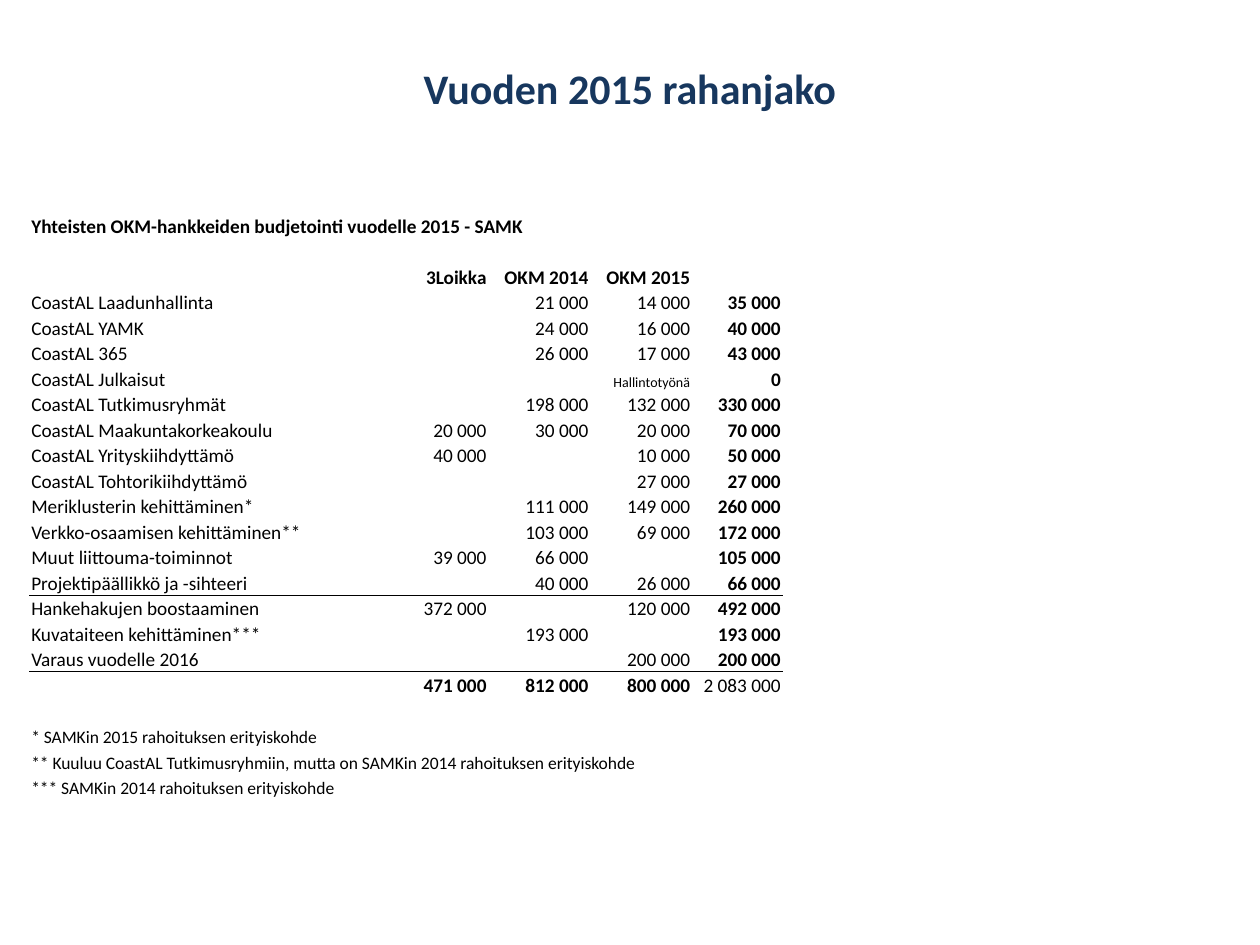
from dataclasses import dataclass

from lxml import etree
from pptx import Presentation
from pptx.dml.color import RGBColor
from pptx.enum.text import MSO_ANCHOR, PP_ALIGN
from pptx.oxml.ns import qn
from pptx.util import Inches, Pt

LEFT, CENTER, RIGHT = PP_ALIGN.LEFT, PP_ALIGN.CENTER, PP_ALIGN.RIGHT
BOTTOM = MSO_ANCHOR.BOTTOM
NBSP = chr(160)


@dataclass(frozen=True)
class Theme:
    font: str = "Calibri"
    title_color: str = "17375E"
    text_color: str = "000000"
    title_size: int = 24
    body_size: int = 11
    note_size: int = 10
    remark_size: int = 8
    rule_width: float = 0.5


@dataclass
class Entry:
    """What one table cell shows."""
    text: str
    align: int = RIGHT
    bold: bool = False
    size: int = Theme.body_size
    span: int = 1


class SlideBuilder:
    def __init__(self, presentation, theme):
        self.theme = theme
        self.width = presentation.slide_width
        self.height = presentation.slide_height
        self.slide = presentation.slides.add_slide(presentation.slide_layouts[6])

    def place(self, left, top, width, height):
        """Turn percentages of the slide into lengths."""
        return (round(left * self.width / 100), round(top * self.height / 100),
                round(width * self.width / 100), round(height * self.height / 100))

    def style(self, paragraph, size, color, bold, align):
        paragraph.alignment = align
        font = paragraph.font
        font.name, font.size, font.bold = self.theme.font, Pt(size), bold
        font.color.rgb = RGBColor.from_string(color)

    def title(self, text, *area):
        frame = self.slide.shapes.add_textbox(*self.place(*area)).text_frame
        frame.word_wrap = True
        paragraph = frame.paragraphs[0]
        paragraph.text = text
        self.style(paragraph, self.theme.title_size, self.theme.title_color, True, CENTER)

    def table(self, rows, column_shares, ruled_rows, *area):
        left, top, width, height = self.place(*area)
        shape = self.slide.shapes.add_table(
            len(rows), len(column_shares), left, top, width, height)
        table = shape.table
        table.first_row = table.horz_banding = False
        for column, share in zip(table.columns, column_shares):
            column.width = round(width * share / sum(column_shares))
        for row_index, entries in enumerate(rows):
            table.rows[row_index].height = height // len(rows)
            for column_index in range(len(column_shares)):
                cell = table.cell(row_index, column_index)
                self.fill_cell(cell, entries.get(column_index, Entry("")))
                if row_index in ruled_rows:
                    self.rule(cell, "a:lnB")
                if row_index - 1 in ruled_rows:
                    self.rule(cell, "a:lnT")
            for column_index, entry in entries.items():
                if entry.span > 1:
                    last = table.cell(row_index, column_index + entry.span - 1)
                    table.cell(row_index, column_index).merge(last)

    def fill_cell(self, cell, entry):
        cell.fill.background()
        cell.vertical_anchor = BOTTOM
        cell.margin_left = cell.margin_right = cell.margin_top = Inches(0.01)
        cell.margin_bottom = 0
        paragraph = cell.text_frame.paragraphs[0]
        paragraph.text = entry.text
        self.style(paragraph, entry.size, self.theme.text_color, entry.bold, entry.align)
        if not entry.text:
            # An empty cell takes its line height from the end mark
            end_mark = etree.SubElement(paragraph._p, qn("a:endParaRPr"))
            end_mark.set("sz", str(entry.size * 100))

    def rule(self, cell, side):
        line = etree.Element(qn(side), w=str(Pt(self.theme.rule_width)))
        fill = etree.SubElement(line, qn("a:solidFill"))
        etree.SubElement(fill, qn("a:srgbClr"), val=self.theme.text_color)
        cell._tc.get_or_add_tcPr().insert(0, line)


def money(thousands):
    amount = f"{thousands * 1000:,}"
    return amount.replace(",", NBSP)


FUNDS = ["3Loikka", "OKM 2014", "OKM 2015"]
REMARK = "Hallintotyönä"
# Thousands of euros from each fund; 0 shows as an empty cell
BUDGET = [
    ("CoastAL Laadunhallinta", 0, 21, 14),
    ("CoastAL YAMK", 0, 24, 16),
    ("CoastAL 365", 0, 26, 17),
    ("CoastAL Julkaisut", 0, 0, REMARK),
    ("CoastAL Tutkimusryhmät", 0, 198, 132),
    ("CoastAL Maakuntakorkeakoulu", 20, 30, 20),
    ("CoastAL Yrityskiihdyttämö", 40, 0, 10),
    ("CoastAL Tohtorikiihdyttämö", 0, 0, 27),
    ("Meriklusterin kehittäminen*", 0, 111, 149),
    ("Verkko-osaamisen kehittäminen**", 0, 103, 69),
    ("Muut liittouma-toiminnot", 39, 66, 0),
    ("Projektipäällikkö ja -sihteeri", 0, 40, 26),
    ("Hankehakujen boostaaminen", 372, 0, 120),
    ("Kuvataiteen kehittäminen***", 0, 193, 0),
    ("Varaus vuodelle 2016", 0, 0, 200),
]
NOTES = [
    ("* SAMKin 2015 rahoituksen erityiskohde", 1),
    ("** Kuuluu CoastAL Tutkimusryhmiin, mutta on SAMKin 2014 rahoituksen erityiskohde", 4),
    ("*** SAMKin 2014 rahoituksen erityiskohde", 1),
]


def budget_row(name, *amounts):
    row = {0: Entry(name, LEFT)}
    for column, amount in enumerate(amounts, 1):
        if amount == REMARK:
            row[column] = Entry(REMARK, size=Theme.remark_size)
        elif amount:
            row[column] = Entry(money(amount))
    total = sum(amount for amount in amounts if amount != REMARK)
    row[len(amounts) + 1] = Entry(money(total), bold=True)
    return row


def total_row():
    totals = [sum(amount for amount in column if amount != REMARK)
              for column in list(zip(*BUDGET))[1:]]
    row = {column: Entry(money(total), bold=True) for column, total in enumerate(totals, 1)}
    row[len(totals) + 1] = Entry(money(sum(totals)))
    return row


def main():
    presentation = Presentation()
    presentation.slide_width, presentation.slide_height = Inches(10), Inches(7.5)
    builder = SlideBuilder(presentation, Theme())
    builder.title("Vuoden 2015 rahanjako", 5, 6, 90, 14.67)

    heading = Entry("Yhteisten OKM-hankkeiden budjetointi vuodelle 2015 - SAMK",
                    LEFT, bold=True, span=3)
    header = {column: Entry(fund, bold=True) for column, fund in enumerate(FUNDS, 1)}
    rows = [{0: heading}, {}, header]
    first_budget_row = len(rows)
    rows += [budget_row(*line) for line in BUDGET]
    last_budget_row = len(rows) - 1
    rows += [total_row(), {}]
    rows += [{0: Entry(note, LEFT, size=Theme.note_size, span=span)} for note, span in NOTES]

    ruled_rows = {first_budget_row + 11, last_budget_row}
    builder.table(rows, [2.92, 0.72, 0.81, 0.81, 0.72], ruled_rows,
                  2.38, 22.53, 59.7, 62.07)
    presentation.save("out.pptx")


if __name__ == "__main__":
    main()
